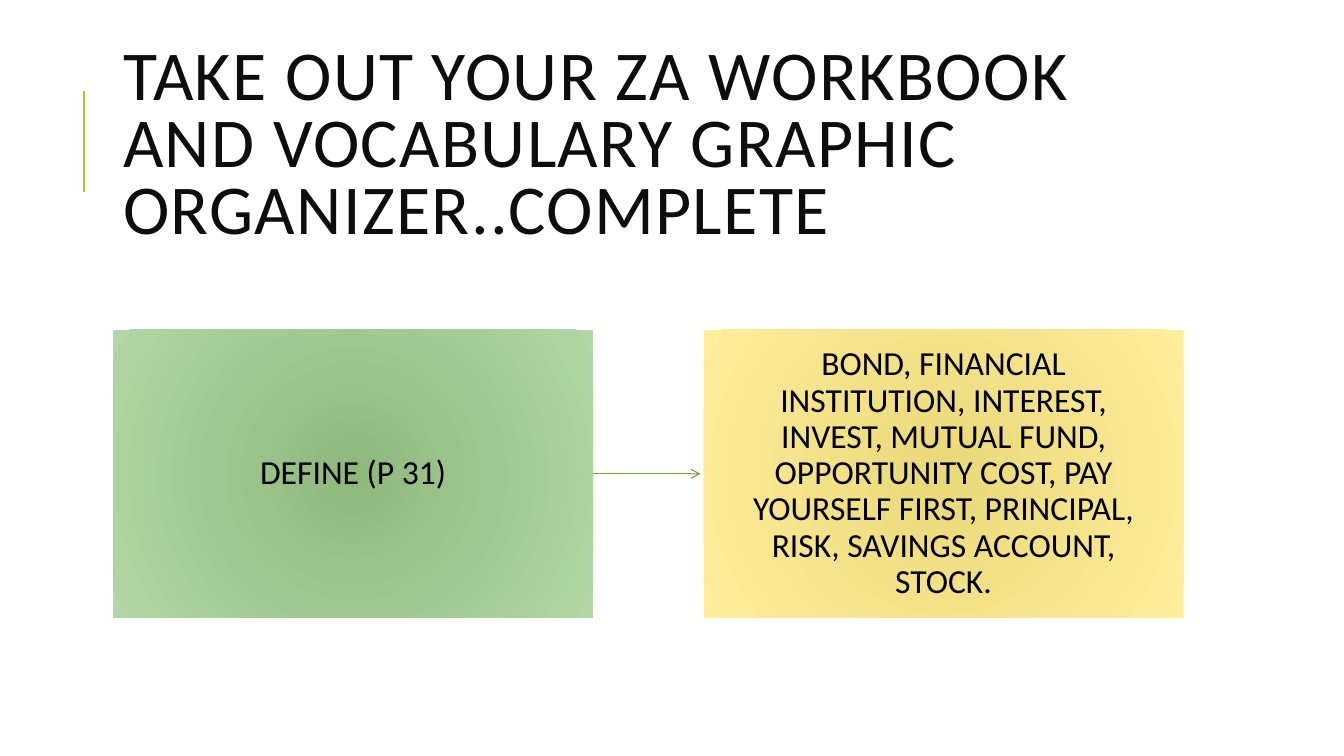
from dataclasses import dataclass
from pptx import Presentation
from pptx.dml.color import RGBColor as RGB
from pptx.enum.shapes import MSO_CONNECTOR as Conn, MSO_SHAPE as Shape
from pptx.enum.text import MSO_ANCHOR as Anchor, MSO_AUTO_SIZE as Fit, PP_ALIGN as Align
from pptx.oxml import parse_xml
from pptx.oxml.ns import nsdecls, qn
from pptx.util import Cm, Pt


@dataclass(frozen=True)
class Theme:
    font: str = "Calibri"
    head: int = 50
    body: int = 24
    ink: str = "0D0D0D"
    black: str = "000000"
    bar: str = "99CB38"
    arrow: str = "63A537"
    green: tuple = ("8FB87D", "B2D7A4")
    gold: tuple = ("EAD979", "FFED9C")


T = Theme()

# Shared measures in centimetres
LEFT, TOP = 2.85, 8.31
WIDE, HIGH = 12.1, 7.26
STEP = 14.88


def xml(tag, attrs="", inner=""):
    return parse_xml(f"<a:{tag} {nsdecls('a')} {attrs}>{inner}</a:{tag}>")


def write(shape, text, size=T.body, color=T.black, align=Align.CENTER,
          lead=0.9, track=0, inset=(0.58, 0.64)):
    frame = shape.text_frame
    frame.word_wrap = True
    frame.auto_size = Fit.NONE
    frame.vertical_anchor = Anchor.MIDDLE
    frame.margin_left = frame.margin_right = Cm(inset[0])
    frame.margin_top = frame.margin_bottom = Cm(inset[1])
    para = frame.paragraphs[0]
    para.alignment, para.line_spacing = align, lead
    run = para.add_run()
    run.text = text
    font = run.font
    font.name, font.size = T.font, Pt(size)
    font.color.rgb = RGB.from_string(color)
    if track:
        run._r.get_or_add_rPr().set("spc", str(track * 100))


def title(slide, text):
    head = slide.shapes.title
    head.left, head.top = Cm(LEFT), Cm(1.63)
    head.width, head.height = Cm(27), Cm(4.17)
    write(head, text, size=T.head, color=T.ink, align=Align.LEFT,
          lead=0.8, track=1, inset=(0.25, 0.13))


def card(slide, left, text, shades):
    box = slide.shapes.add_shape(
        Shape.RECTANGLE, Cm(left), Cm(TOP), Cm(WIDE), Cm(HIGH))
    box.shadow.inherit = False
    box.line.fill.background()
    # Radial fill, from the centre outwards
    box.fill.gradient()
    for stop, shade in zip(box.fill.gradient_stops, shades):
        stop.color.rgb = RGB.from_string(shade)
    grad = box._element.spPr.find(qn("a:gradFill"))
    mid = '<a:fillToRect l="50000" t="50000" r="50000" b="50000"/>'
    grad.replace(grad.find(qn("a:lin")), xml("path", 'path="circle"', mid))
    write(box, text)
    return box


def line(slide, start, end, color, width):
    link = slide.shapes.add_connector(
        Conn.STRAIGHT, *(Cm(n) for n in (*start, *end)))
    link.line.color.rgb = RGB.from_string(color)
    link.line.width = Pt(width)
    link._element.spPr.append(xml("effectLst"))
    return link


def main():
    deck = Presentation()
    deck.slide_width, deck.slide_height = Cm(33.87), Cm(19.05)
    slide = deck.slides.add_slide(deck.slide_layouts[5])

    # Heading with its accent bar
    line(slide, (2.12, 4.83), (2.12, 2.3), T.bar, 1.5)
    title(slide, "TAKE OUT YOUR ZA WORKBOOK AND VOCABULARY GRAPHIC "
                 "ORGANIZER..COMPLETE")

    # Task and its terms
    task = card(slide, LEFT, "DEFINE (P 31)", T.green)
    card(slide, LEFT + STEP,
         "BOND, FINANCIAL INSTITUTION, INTEREST, INVEST, MUTUAL FUND, "
         "OPPORTUNITY COST, PAY YOURSELF FIRST, PRINCIPAL, RISK, "
         "SAVINGS ACCOUNT, STOCK.", T.gold)

    # Arrow that stops just short of the terms
    mid = TOP + HIGH / 2
    link = line(slide, (LEFT + WIDE, mid), (LEFT + STEP - 0.08, mid),
                T.arrow, 0.75)
    link.begin_connect(task, 3)
    link.line._get_or_add_ln().append(xml("tailEnd", 'type="arrow"'))

    deck.save("out.pptx")


if __name__ == "__main__":
    main()
